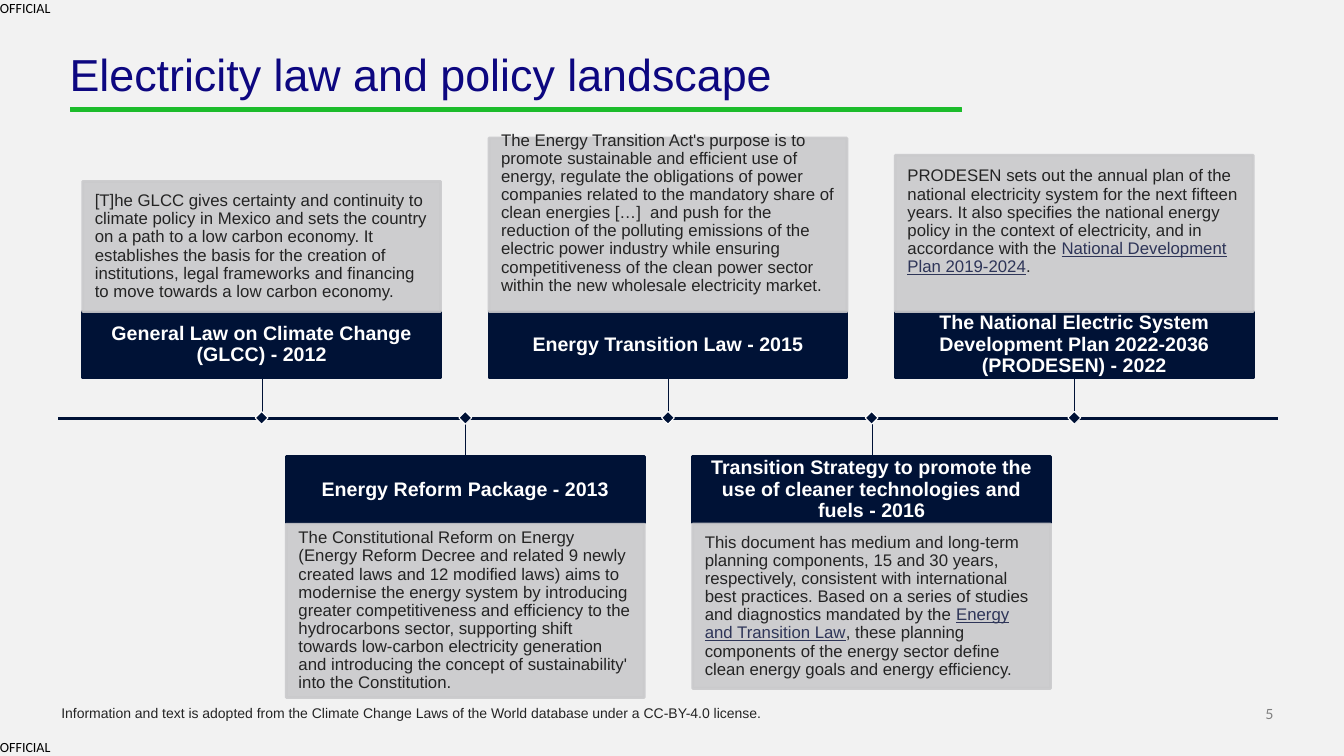
from dataclasses import dataclass

from lxml import etree
from pptx import Presentation
from pptx.dml.color import RGBColor
from pptx.enum.shapes import MSO_CONNECTOR, MSO_SHAPE
from pptx.enum.text import MSO_ANCHOR, MSO_AUTO_SIZE, PP_ALIGN
from pptx.oxml.ns import qn
from pptx.util import Emu, Pt

RECT = MSO_SHAPE.RECTANGLE
STRAIGHT = MSO_CONNECTOR.STRAIGHT
TOP, MIDDLE, BOTTOM = MSO_ANCHOR.TOP, MSO_ANCHOR.MIDDLE, MSO_ANCHOR.BOTTOM
LEFT, CENTER, RIGHT = PP_ALIGN.LEFT, PP_ALIGN.CENTER, PP_ALIGN.RIGHT
NO_FIT = MSO_AUTO_SIZE.NONE

EMU_PER_PX = 9144  # 100 px to the inch
NAVY, GREY, INK, LINK = "001236", "CACACC", "242424", "2E3558"
WHITE, GREEN = "FFFFFF", "1CBC2B"

FIRST_LEFT, DOUBLE_STEP, CARD_W, HEADER_H = 82, 403, 355, 66
AXIS_Y, UPPER_HEADER, LOWER_HEADER = 415, 309, 453
MARKER = 9


@dataclass(frozen=True)
class Event:
    """One law; every second run of the description is underlined as a link."""
    heading: str
    description: tuple[str, ...]
    height: int
    bottom_inset: int = 12


EVENTS = (
    Event("General Law on Climate Change (GLCC) - 2012",
          ("[T]he GLCC gives certainty and continuity to climate policy in Mexico and sets the "
           "country on a path to a low carbon economy. It establishes the basis for the creation "
           "of institutions, legal frameworks and financing to move towards a low carbon economy.",),
          129),
    Event("Energy Reform Package - 2013",
          ("The Constitutional Reform on Energy (Energy Reform Decree and related 9 newly created "
           "laws and 12 modified laws) aims to modernise the energy system by introducing greater "
           "competitiveness and efficiency to the hydrocarbons sector, supporting shift towards "
           "low-carbon electricity generation and introducing the concept of sustainability' into "
           "the Constitution.",),
          172),
    Event("Energy Transition Law - 2015",
          ("The Energy Transition Act's purpose is to promote sustainable and efficient use of "
           "energy, regulate the obligations of power companies related to the mandatory share of "
           "clean energies […]  and push for the reduction of the polluting emissions of the "
           "electric power industry while ensuring competitiveness of the clean power sector "
           "within the new wholesale electricity market.",),
          172, 35),
    Event("Transition Strategy to promote the use of cleaner technologies and fuels - 2016",
          ("This document has medium and long-term planning components, 15 and 30 years, "
           "respectively, consistent with international best practices. Based on a series of "
           "studies and diagnostics mandated by the ",
           "Energy and Transition Law",
           ", these planning components of the energy sector define clean energy goals and energy "
           "efficiency."),
          163),
    Event("The National Electric System Development Plan 2022-2036 (PRODESEN) - 2022",
          ("PRODESEN sets out the annual plan of the national electricity system for the next "
           "fifteen years. It also specifies the national energy policy in the context of "
           "electricity, and in accordance with the ",
           "National Development Plan 2019-2024",
           "."),
          155, 35),
)


def px(n: int) -> Emu:
    return Emu(n * EMU_PER_PX)


def rgb(color: str) -> RGBColor:
    return RGBColor.from_string(color)


def write(tf, *runs: str, size: int, color: str, font: str = "Arial", bold: bool = False,
          align=LEFT, anchor=TOP, spacing: float = 1.0, insets=(0, 0, 0, 0),
          wrap: bool = True) -> None:
    """Fill a text frame with one paragraph; insets are left, top, right, bottom."""
    tf.auto_size = NO_FIT
    tf.word_wrap = wrap
    tf.vertical_anchor = anchor
    tf.margin_left, tf.margin_top, tf.margin_right, tf.margin_bottom = map(px, insets)
    p = tf.paragraphs[0]
    p.alignment, p.line_spacing = align, spacing
    for i, text in enumerate(runs):
        is_link = i % 2 == 1
        r = p.add_run()
        r.text = text
        r.font.name, r.font.size, r.font.bold = font, Pt(size), bold
        r.font.color.rgb = rgb(LINK if is_link else color)
        if is_link:
            r.font.underline = True


def add_text(s, x: int, y: int, w: int, h: int, text: str, **style) -> None:
    write(s.shapes.add_textbox(px(x), px(y), px(w), px(h)).text_frame, text, **style)


def add_rect(s, x: int, y: int, w: int, h: int, fill: str, line: str,
             weight: float, opacity: int = 100):
    sp = s.shapes.add_shape(RECT, px(x), px(y), px(w), px(h))
    sp.shadow.inherit = False
    sp.fill.solid()
    sp.fill.fore_color.rgb = rgb(fill)
    sp.line.color.rgb = rgb(line)
    sp.line.width = Pt(weight)
    if opacity < 100:
        for clr in sp.element.spPr.iter(qn("a:srgbClr")):
            etree.SubElement(clr, qn("a:alpha")).set("val", str(opacity * 1000))
    return sp


def add_line(s, x1: int, y1: int, x2: int, y2: int, weight: float) -> None:
    c = s.shapes.add_connector(STRAIGHT, px(x1), px(y1), px(x2), px(y2))
    c.line.color.rgb = rgb(NAVY)
    c.line.width = Pt(weight)
    etree.SubElement(c.element.spPr, qn("a:effectLst"))


def add_event(s, event: Event, index: int) -> None:
    """Place cards alternately above and below the axis, at half-card steps."""
    left = FIRST_LEFT + (DOUBLE_STEP * index + 1) // 2
    middle = left + CARD_W // 2 + 1
    if index % 2 == 0:
        header_top = UPPER_HEADER
        body_top = header_top - event.height
        stem_end = header_top + HEADER_H
    else:
        header_top = stem_end = LOWER_HEADER
        body_top = header_top + HEADER_H + 1

    header = add_rect(s, left, header_top, CARD_W, HEADER_H, NAVY, NAVY, 2)
    write(header.text_frame, event.heading, size=14, color=WHITE, bold=True, align=CENTER,
          anchor=MIDDLE, spacing=0.9, insets=(8, 8, 8, 8))
    body = add_rect(s, left, body_top, CARD_W, event.height, GREY, GREY, 2, opacity=90)
    write(body.text_frame, *event.description, size=12, color=INK, anchor=MIDDLE,
          spacing=0.9, insets=(12, 12, 12, event.bottom_inset))
    add_line(s, middle, stem_end, middle, AXIS_Y, 0.75)
    marker = add_rect(s, middle - MARKER // 2 - 1, AXIS_Y - MARKER // 2 - 1,
                      MARKER, MARKER, NAVY, WHITE, 0.75)
    marker.rotation = 45


def main() -> None:
    prs = Presentation()
    prs.slide_width, prs.slide_height = px(1333), px(750)
    s = prs.slides.add_slide(prs.slide_layouts.get_by_name("Title Only"))
    s.background.fill.solid()
    s.background.fill.fore_color.rgb = rgb("F2F2F2")

    title = s.shapes.title
    title.left, title.top, title.width, title.height = map(px, (69, 52, 886, 48))
    write(title.text_frame, "Electricity law and policy landscape", size=32,
          color="0D0780", spacing=0.9)
    add_rect(s, 70, 107, 884, 4, GREEN, GREEN, 0.75)

    for y in (0, 733):
        add_text(s, 0, y, 53, 17, "OFFICIAL", size=10, color="000000", font="Calibri", wrap=False)

    add_line(s, 58, AXIS_Y, 1268, AXIS_Y, 2)
    for i, event in enumerate(EVENTS):
        add_event(s, event, i)

    add_text(s, 51, 694, 1120, 27,
             "Information and text is adopted from the Climate Change Laws of the World database "
             "under a CC-BY-4.0 license.", size=10, color=INK, insets=(10, 5, 10, 5))
    add_text(s, 1221, 700, 42, 17, "5", size=10, color="7F7F7F", font="Lato",
             align=RIGHT, anchor=BOTTOM)
    prs.save("out.pptx")


if __name__ == "__main__":
    main()
